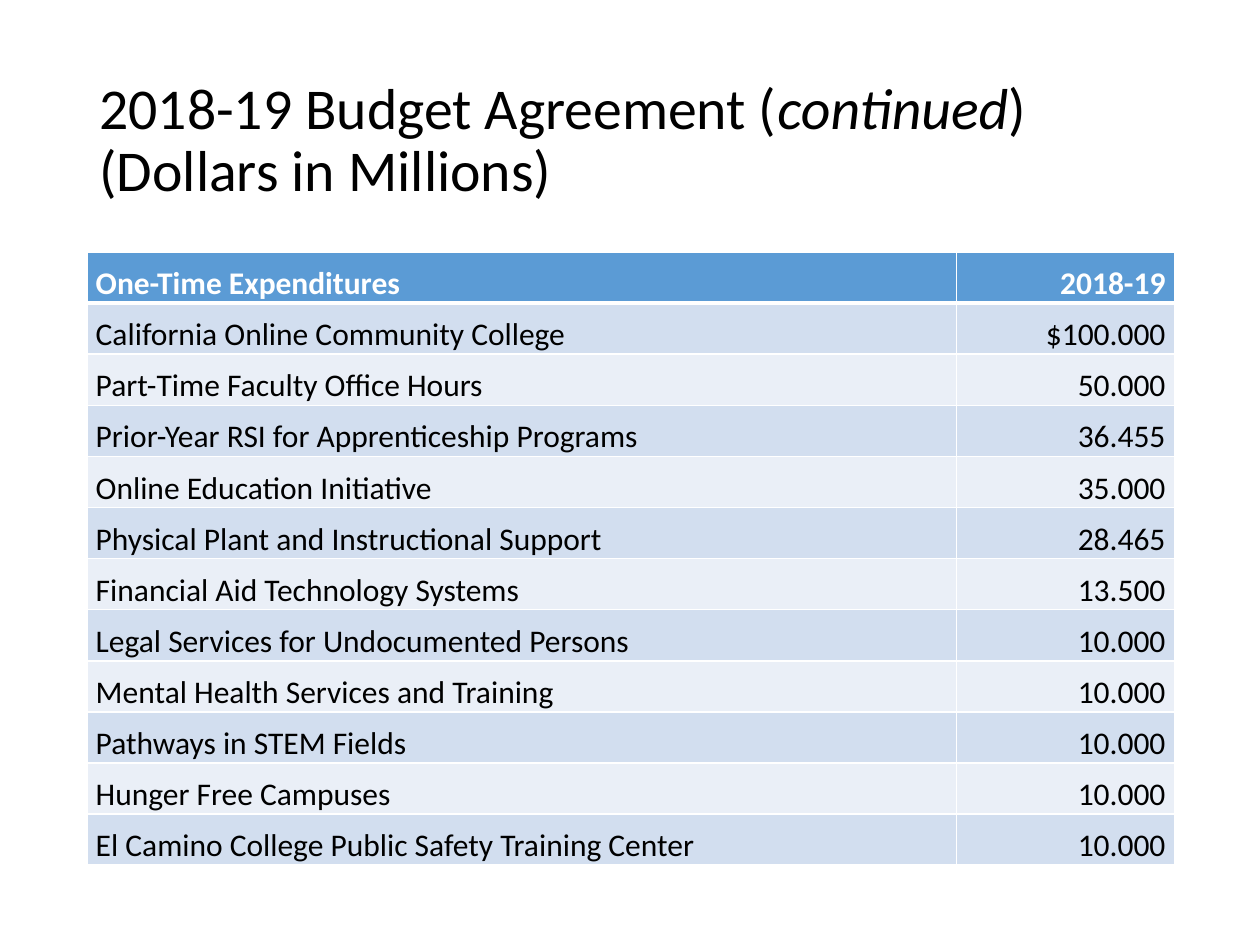
from lxml import etree
from pptx import Presentation
from pptx import util as u
from pptx.dml.color import RGBColor
from pptx.enum import text
from pptx.oxml import ns

FONT = "Calibri"
TITLE = [("2018-19 Budget Agreement (", False), ("continued", True), (")", False)]
SUBTITLE = "(Dollars in Millions)"
ROWS = [
    ("One-Time Expenditures", "2018-19"),
    ("California Online Community College", "$100.000"),
    ("Part-Time Faculty Office Hours", "50.000"),
    ("Prior-Year RSI for Apprenticeship Programs", "36.455"),
    ("Online Education Initiative", "35.000"),
    ("Physical Plant and Instructional Support", "28.465"),
    ("Financial Aid Technology Systems", "13.500"),
    ("Legal Services for Undocumented Persons", "10.000"),
    ("Mental Health Services and Training", "10.000"),
    ("Pathways in STEM Fields", "10.000"),
    ("Hunger Free Campuses", "10.000"),
    ("El Camino College Public Safety Training Center", "10.000"),
]
COLUMNS = [6.9, 1.73]
ALIGNS = [text.PP_ALIGN.LEFT, text.PP_ALIGN.RIGHT]
HEADER, BANDS = "5B9BD5", ["EAEFF7", "D2DEEF"]
LEFT, WIDTH, TABLE_TOP, TABLE_HEIGHT = 0.69, 8.62, 2, 4.87


def rgb(value):
    return RGBColor.from_string(value)


def style(r, size, color, bold=False, italic=False):
    r.font.name, r.font.size = FONT, u.Pt(size)
    r.font.bold, r.font.italic = bold, italic
    r.font.color.rgb = rgb(color)


def add_borders(cell, widths):
    tc_pr = cell._tc.get_or_add_tcPr()
    for side, width in widths.items():
        ln = etree.SubElement(tc_pr, ns.qn(f"a:ln{side}"), w=str(u.Pt(width)))
        fill = etree.SubElement(ln, ns.qn("a:solidFill"))
        etree.SubElement(fill, ns.qn("a:srgbClr"), val="FFFFFF")


def add_title(s):
    sp = s.shapes.add_textbox(*map(u.Inches, (LEFT, 0.4, WIDTH, 1.45)))
    tf = sp.text_frame
    tf.word_wrap = True
    tf.vertical_anchor = text.MSO_ANCHOR.MIDDLE
    p = tf.paragraphs[0]
    p.line_spacing = 0.9
    for words, italic in TITLE:
        r = p.add_run()
        r.text = words
        style(r, 33, "000000", italic=italic)
    p.add_line_break()
    r = p.add_run()
    r.text = SUBTITLE
    style(r, 33, "000000")


def add_budget_table(s):
    box = map(u.Inches, (LEFT, TABLE_TOP, WIDTH, TABLE_HEIGHT))
    table = s.shapes.add_table(len(ROWS), len(COLUMNS), *box).table
    for column, width in zip(table.columns, COLUMNS):
        column.width = u.Inches(width)
    for i, row in enumerate(ROWS):
        header = i == 0
        table.rows[i].height = u.Inches(TABLE_HEIGHT / len(ROWS))
        for j, words in enumerate(row):
            cell = table.cell(i, j)
            cell.margin_left = cell.margin_right = u.Inches(0.07)
            cell.margin_top = cell.margin_bottom = 0
            cell.vertical_anchor = text.MSO_ANCHOR.BOTTOM
            add_borders(cell, {"L": 1, "R": 1, "T": 3 if i == 1 else 1, "B": 3 if header else 1})
            cell.fill.solid()
            cell.fill.fore_color.rgb = rgb(HEADER if header else BANDS[i % 2])
            cell.text_frame.text = words
            p = cell.text_frame.paragraphs[0]
            p.alignment = ALIGNS[j]
            style(p.runs[0], 18, "FFFFFF" if header else "000000", bold=header)


def main():
    prs = Presentation()
    prs.slide_width, prs.slide_height = u.Inches(10), u.Inches(7.5)
    s = prs.slides.add_slide(prs.slide_layouts[6])
    add_title(s)
    add_budget_table(s)
    prs.save("out.pptx")


if __name__ == "__main__":
    main()
